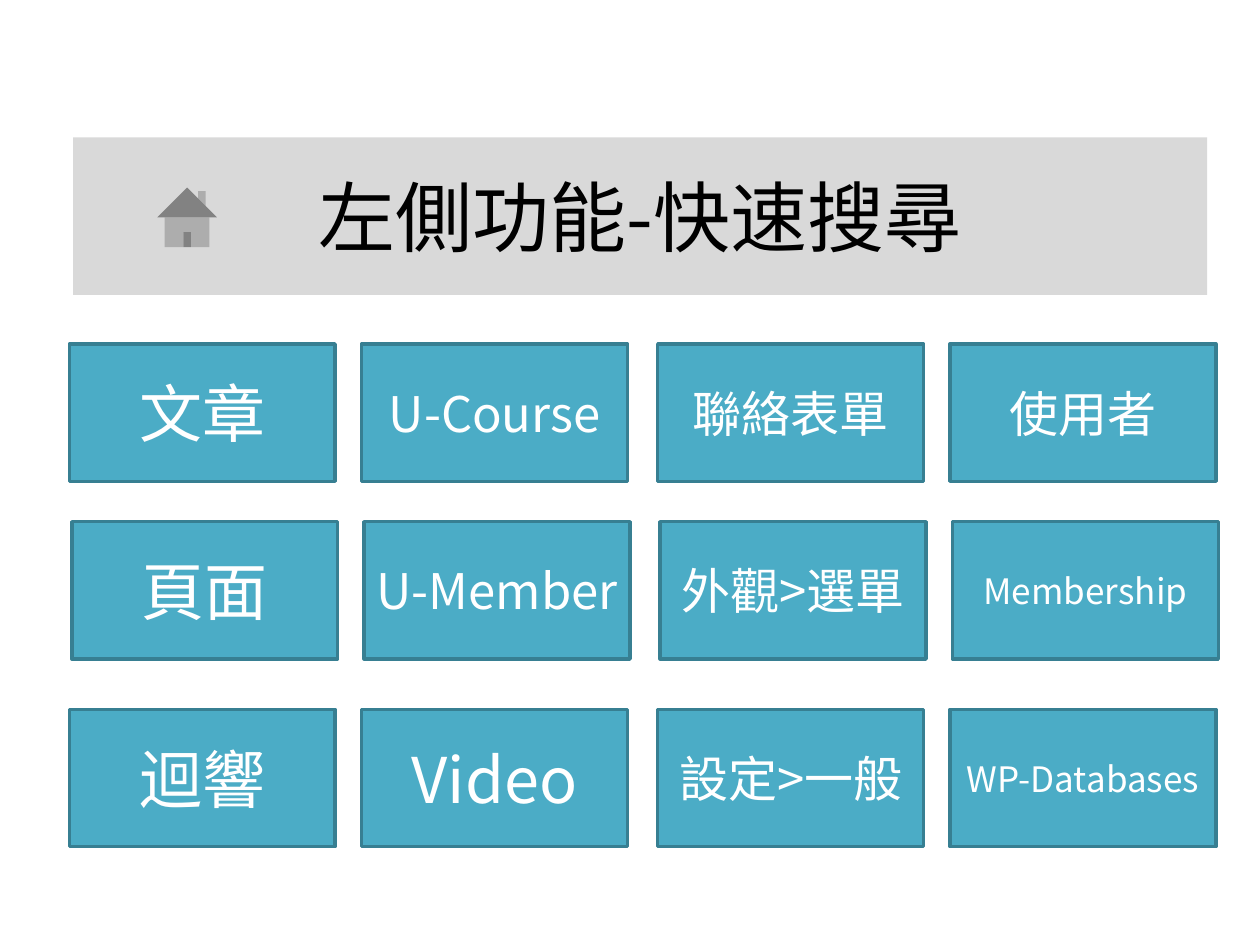
from pptx import Presentation
from pptx.dml.color import RGBColor
from pptx.enum.shapes import MSO_SHAPE
from pptx.enum.text import MSO_ANCHOR, MSO_AUTO_SIZE, PP_ALIGN
from pptx.oxml.ns import qn
from pptx.util import Inches, Pt
from lxml.etree import SubElement

COLORS = {
    "banner": "D9D9D9",
    "title": "000000",
    "button": "4BACC6",
    "border": "377F92",
    "label": "FFFFFF",
}
BUTTON_WIDTH, BUTTON_HEIGHT = 2.11, 1.09
COLUMN_LEFTS = [0.55, 2.87, 5.22, 7.54]
ROWS = [
    (2.73, 0, [("文章", 36), ("U-Course", 28), ("聯絡表單", 28), ("使用者", 28)]),
    (4.14, 0.02, [("頁面", 36), ("U-Member", 28), ("外觀>選單", 28), ("Membership", 20)]),
    (5.63, 0, [("迴響", 36), ("Video", 36), ("設定>一般", 28), ("WP-Databases", 20)]),
]


class SlideBuilder:
    font_name = "Noto Sans CJK SC"

    def __init__(self, slide):
        self.slide = slide

    def fill_shape(self, shape, color):
        shape.fill.solid()
        shape.fill.fore_color.rgb = RGBColor.from_string(COLORS[color])

    def set_text(self, shape, text, size, color):
        text_frame = shape.text_frame
        text_frame.text = text
        text_frame.word_wrap = True
        text_frame.auto_size = MSO_AUTO_SIZE.NONE
        text_frame.vertical_anchor = MSO_ANCHOR.MIDDLE
        paragraph = text_frame.paragraphs[0]
        paragraph.alignment = PP_ALIGN.CENTER
        run = paragraph.runs[0]
        run.font.size = Pt(size)
        run.font.color.rgb = RGBColor.from_string(COLORS[color])
        run.font.name = self.font_name
        east_asian = SubElement(run._r.get_or_add_rPr(), qn("a:ea"))
        east_asian.set("typeface", self.font_name)

    def add_title(self, text, left, top, width, height):
        title = self.slide.shapes.title
        title.left, title.top = Inches(left), Inches(top)
        title.width, title.height = Inches(width), Inches(height)
        self.fill_shape(title, "banner")
        self.set_text(title, text, 44, "title")

    def add_shape(self, kind, left, top, width, height, color):
        shape = self.slide.shapes.add_shape(
            kind, Inches(left), Inches(top), Inches(width), Inches(height)
        )
        shape.shadow.inherit = False
        self.fill_shape(shape, color)
        return shape

    def add_button(self, text, size, left, top):
        button = self.add_shape(
            MSO_SHAPE.RECTANGLE, left, top, BUTTON_WIDTH, BUTTON_HEIGHT, "button"
        )
        button.line.color.rgb = RGBColor.from_string(COLORS["border"])
        button.line.width = Pt(2)
        self.set_text(button, text, size, "label")

    def add_home_icon(self, left, top, size):
        icon = self.add_shape(
            MSO_SHAPE.ACTION_BUTTON_HOME, left, top, size, size, "banner"
        )
        icon.line.fill.background()


def main():
    presentation = Presentation()
    presentation.slide_width = Inches(10)
    presentation.slide_height = Inches(7.5)
    slide = presentation.slides.add_slide(presentation.slide_layouts[5])
    builder = SlideBuilder(slide)
    builder.add_title("左側功能-快速搜尋", 0.58, 1.09, 9, 1.25)
    for top, shift, labels in ROWS:
        for left, (text, size) in zip(COLUMN_LEFTS, labels):
            builder.add_button(text, size, left + shift, top)
    builder.add_home_icon(1.17, 1.41, 0.63)
    presentation.save("out.pptx")


if __name__ == "__main__":
    main()
